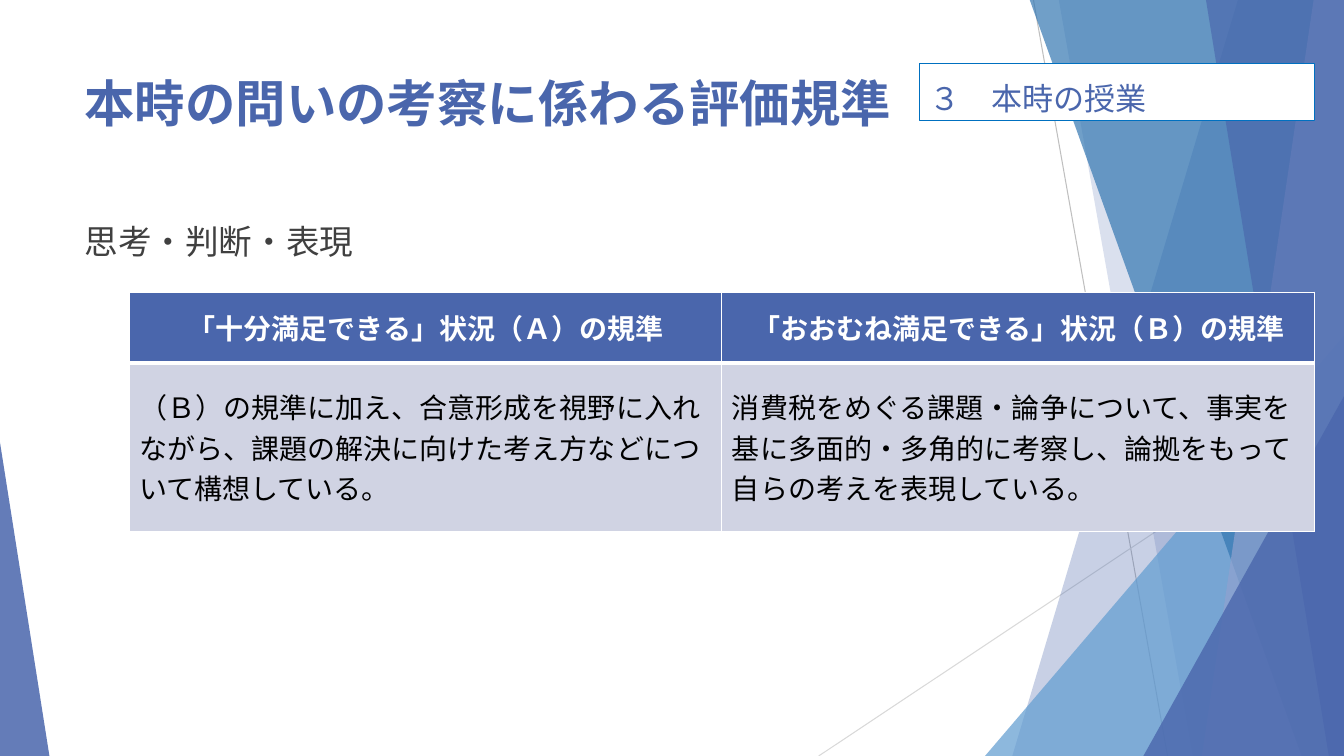
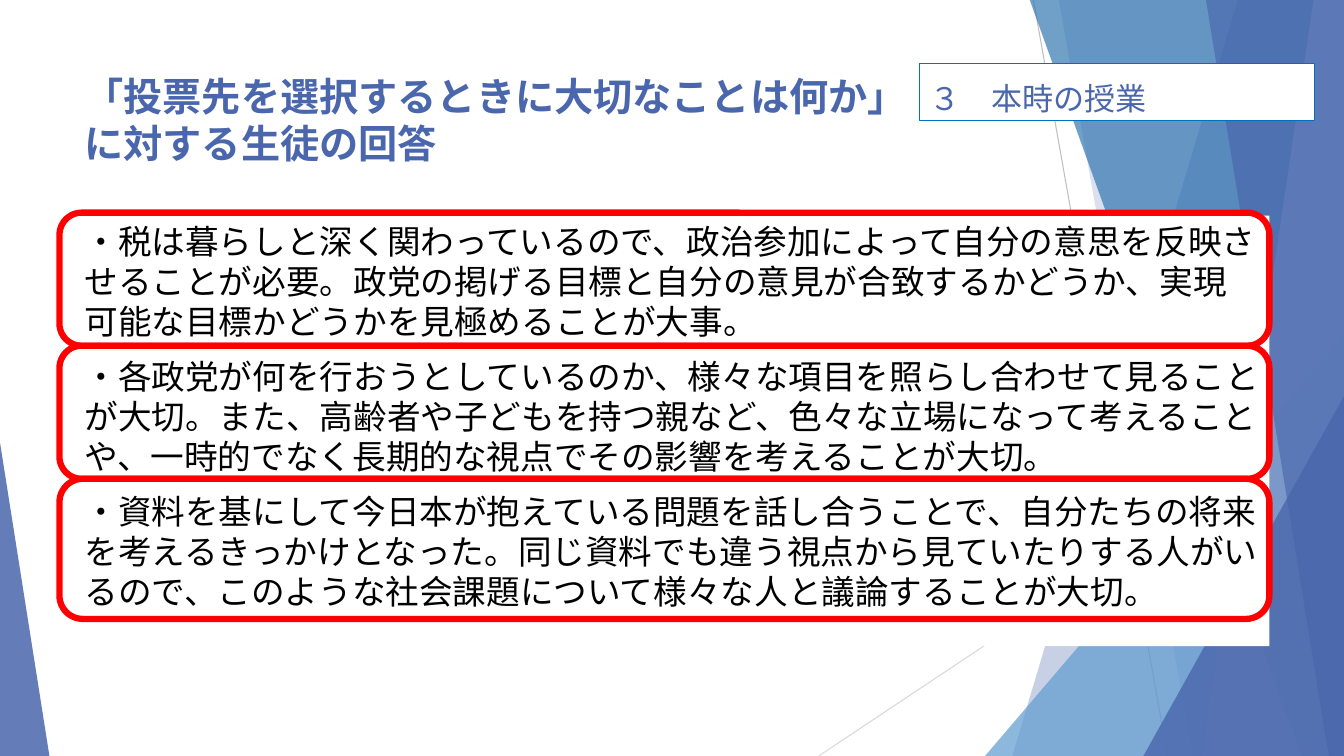
import pptx
import pptx.util
import pptx.dml.color
import pptx.enum.shapes
import pptx.enum.text
import pptx.oxml
import pptx.oxml.ns

W, H = 13.33, 7.5
LEFT, TOP = 0.74, 2.14
HUES = {
    "blue": "4A66AC", "sky": "629DD1", "deep": "3477B2", "pale": "90A2CF",
    "edge": "0070C0", "cell": "D0D3E3", "red": "FF0000", "white": "FFFFFF",
    "black": "000000", "ink": "404040", "gray": "BFBFBF", "light": "D9D9D9",
}
LINES = [("gray", 10.25, 0, 11.58, H), ("light", W, 4.03, 8.12, H)]
SHARDS = [
    ("band", "blue", 30, (12.28, 10.04)),
    ("band", "blue", 20, (10.5, 11.83)),
    ("peak", "sky", 72, (9.77, 3.33, W - 9.77, 1)),
    ("band", "deep", 70, (10.21, 12.91)),
    ("band", "pale", 70, (13.03, 11.92)),
    ("band", "blue", 65, (11.96, 13.18)),
    ("peak", "blue", 80, (11.34, 3.93, W - 11.34, 1)),
    ("peak", "blue", 85, (0, 4.39, 0.49, 0)),
]
TAG = "３　本時の授業"
TITLES = [
    ("本時の問いの考察に係わる評価規準", 36),
    ("「投票先を選択するときに大切なことは何か」\vに対する生徒の回答", 28),
]
TOPIC = "思考・判断・表現"
GRID = [
    ["「十分満足できる」状況（Ａ）の規準", "「おおむね満足できる」状況（Ｂ）の規準"],
    ["（Ｂ）の規準に加え、合意形成を視野に入れながら、課題の解決に向けた考え方などについて構想している。",
     "消費税をめぐる課題・論争について、事実を基に多面的・多角的に考察し、論拠をもって自らの考えを表現している。"],
]
ROWS = [0.7, 1.67]
VOICES = [
    "・税は暮らしと深く関わっているので、政治参加によって自分の意思を反映させることが必要。政党の掲げる目標と自分の意見が合致するかどうか、実現可能な目標かどうかを見極めることが大事。",
    "・各政党が何を行おうとしているのか、様々な項目を照らし合わせて見ることが大切。また、高齢者や子どもを持つ親など、色々な立場になって考えることや、一時的でなく長期的な視点でその影響を考えることが大切。",
    "・資料を基にして今日本が抱えている問題を話し合うことで、自分たちの将来を考えるきっかけとなった。同じ資料でも違う視点から見ていたりする人がいるので、このような社会課題について様々な人と議論することが大切。",
]
FRAMES = [1.32, 1.32, 1.39]

inch, point = pptx.util.Inches, pptx.util.Pt
SHAPE = pptx.enum.shapes.MSO_SHAPE
ALIGN = pptx.enum.text.PP_ALIGN
MIDDLE = pptx.enum.text.MSO_ANCHOR.MIDDLE


def hue(name):
    return pptx.dml.color.RGBColor.from_string(HUES[name])


def node(parent, tag, **attrs):
    item = pptx.oxml.ns.qn("a:" + tag)
    child = parent.makeelement(item, attrs)
    parent.append(child)
    return child


def paint(shape, fill=None, line=None, width=0.75, alpha=100):
    shape.shadow.inherit = False
    if fill:
        shape.fill.solid()
        shape.fill.fore_color.rgb = hue(fill)
        if alpha < 100:
            color = shape.fill._xPr.find(".//" + pptx.oxml.ns.qn("a:srgbClr"))
            node(color, "alpha", val=str(alpha * 1000))
    else:
        shape.fill.background()
    if line:
        shape.line.color.rgb = hue(line)
        shape.line.width = point(width)
    else:
        shape.line.fill.background()


def write(frame, texts, size, font, color, bold=False, **form):
    frame.word_wrap = True
    look = {"size": point(size), "name": font, "bold": bold}
    form = {"alignment": ALIGN.LEFT, **form}
    for i, text in enumerate(texts):
        para = frame.add_paragraph() if i else frame.paragraphs[0]
        para.text = text
        for key, val in form.items():
            setattr(para, key, val)
        for run in para.runs:
            for key, val in look.items():
                setattr(run.font, key, val)
            run.font.color.rgb = hue(color)


def box(slide, kind, x, y, w, h, **style):
    shape = slide.shapes.add_shape(kind, *map(inch, (x, y, w, h)))
    paint(shape, **style)
    return shape


def band(slide, color, alpha, place):
    top, base = place
    spots = [(top, -0.01), (W, -0.01), (W, H), (base, H)]
    spots = [(inch(x), inch(y)) for x, y in spots]
    path = slide.shapes.build_freeform(*spots[0], scale=1.0)
    path.add_line_segments(spots[1:], close=True)
    paint(path.convert_to_shape(), color, alpha=alpha)


def peak(slide, color, alpha, place):
    x, y, w, tip = place
    shape = box(slide, SHAPE.ISOSCELES_TRIANGLE, x, y, w, H - y, fill=color, alpha=alpha)
    shape.adjustments[0] = tip


def backdrop(slide):
    for color, *ends in LINES:
        line = slide.shapes.add_connector(
            pptx.enum.shapes.MSO_CONNECTOR.STRAIGHT, *map(inch, ends))
        line.line.color.rgb = hue(color)
        line.line.width = point(0.75)
        node(line._element.spPr, "effectLst")
    draw = {"band": band, "peak": peak}
    for kind, color, alpha, place in SHARDS:
        draw[kind](slide, color, alpha, place)


def label(slide, y, h, text, *style, **form):
    area = slide.shapes.add_textbox(*map(inch, (LEFT, y, 9.4, h)))
    write(area.text_frame, [text], *style, **form)


def heading(slide, text, size):
    tag = box(slide, SHAPE.RECTANGLE, 9.12, 0.63, 3.92, 0.57, fill="white", line="edge")
    tag.text_frame.vertical_anchor = MIDDLE
    write(tag.text_frame, [TAG], 22.2, "Arial", "blue", line_spacing=1.3)
    label(slide, 0.67, 1.44, text, size, "Arial", "blue", True)


def border(cell, base):
    props = cell._tc.get_or_add_tcPr()
    for side in "LRTB":
        width = base if side == "B" else 1
        edge = node(props, "ln" + side, w=str(point(width)))
        node(node(edge, "solidFill"), "srgbClr", val=HUES["white"])


def rubric(slide):
    label(slide, TOP, 0.54, TOPIC, 24, "Lato", "ink", space_before=point(10))
    table = slide.shapes.add_table(
        2, 2, *map(inch, (1.28, 2.9, 11.76, sum(ROWS)))).table
    for r, texts in enumerate(GRID):
        head = r == 0
        table.rows[r].height = inch(ROWS[r])
        for c, text in enumerate(texts):
            cell = table.cell(r, c)
            border(cell, 3 if head else 1)
            cell.fill.solid()
            cell.fill.fore_color.rgb = hue("blue" if head else "cell")
            cell.vertical_anchor = MIDDLE
            write(cell.text_frame, [text], 20, "Lato", "white" if head else "black", head,
                  alignment=ALIGN.CENTER if head else ALIGN.LEFT)


def replies(slide):
    panel = box(slide, SHAPE.RECTANGLE, LEFT, TOP, 11.85, 4.27, fill="white")
    panel.text_frame.vertical_anchor = pptx.enum.text.MSO_ANCHOR.TOP
    write(panel.text_frame, VOICES, 24, "Lato", "black", space_before=point(10))


def frames(slide):
    y = 2.11
    for h in FRAMES:
        box(slide, SHAPE.ROUNDED_RECTANGLE, 0.59, y, 12, h, line="red", width=4.5)
        y += h


def main():
    deck = pptx.Presentation()
    deck.slide_width, deck.slide_height = inch(W), inch(H)
    parts = [(rubric, heading), (replies, heading, frames)]
    for title, steps in zip(TITLES, parts):
        slide = deck.slides.add_slide(deck.slide_layouts[6])
        backdrop(slide)
        for step in steps:
            step(slide, *(title if step is heading else ()))
    deck.save("out.pptx")


if __name__ == "__main__":
    main()
